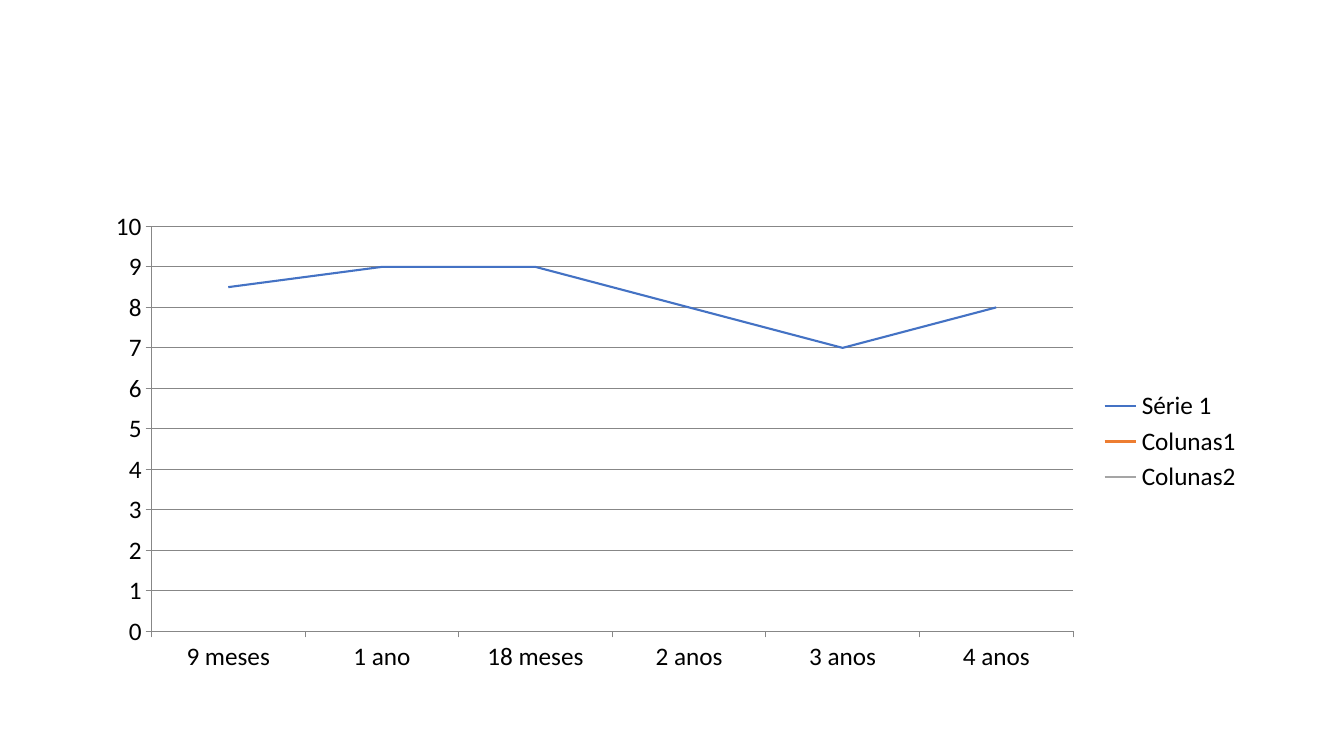
import pptx
import pptx.chart.data
import pptx.dml.color
import pptx.enum.chart
import pptx.util

WIDE, HIGH = 13.33, 7.5
HUES = {"text": "000000", "rule": "878787", "back": "FFFFFF"}
AGES = ["9 meses", "1 ano", "18 meses", "2 anos", "3 anos", "4 anos"]
LINES = [
    ("Série 1", [8.5, 9, 9, 8, 7, 8], "4472C4"),
    ("Colunas1", [None] * len(AGES), "ED7D31"),
    ("Colunas2", [None] * len(AGES), "A5A5A5"),
]


def paint(line, hue, size):
    """Give a line its colour and its width in points."""
    line.color.rgb = pptx.dml.color.RGBColor.from_string(hue)
    line.width = pptx.util.Pt(size)


def style_axes(chart):
    """Set the scale, ticks and rules of both axes."""
    ages, marks = chart.category_axis, chart.value_axis
    for axis in (ages, marks):
        axis.major_tick_mark = pptx.enum.chart.XL_TICK_MARK.OUTSIDE
        axis.minor_tick_mark = pptx.enum.chart.XL_TICK_MARK.NONE
        paint(axis.format.line, HUES["rule"], 0.75)
    ages.has_major_gridlines = False
    marks.has_major_gridlines = True
    paint(marks.major_gridlines.format.line, HUES["rule"], 0.75)
    marks.minimum_scale, marks.maximum_scale, marks.major_unit = 0, 10, 1


def draw_chart(slide, left, top, width, height):
    """Place the line chart in a box given as shares of the slide."""
    data = pptx.chart.data.CategoryChartData()
    data.categories = AGES
    for name, marks, _ in LINES:
        data.add_series(name, marks)
    box = [pptx.util.Inches(share * side) for share, side in
           zip((left, top, width, height), (WIDE, HIGH) * 2)]
    chart = slide.shapes.add_chart(
        pptx.enum.chart.XL_CHART_TYPE.LINE, *box, data).chart
    chart.has_title = False
    chart.font.name = "Calibri"
    chart.font.size = pptx.util.Pt(18)
    chart.font.color.rgb = pptx.dml.color.RGBColor.from_string(HUES["text"])
    chart.has_legend = True
    chart.legend.position = pptx.enum.chart.XL_LEGEND_POSITION.RIGHT
    chart.legend.include_in_layout = False
    plot = chart.plots[0]
    plot.vary_by_categories = False
    for series, (_, _, hue) in zip(plot.series, LINES):
        series.smooth = False
        series.marker.style = pptx.enum.chart.XL_MARKER_STYLE.NONE
        paint(series.format.line, hue, 1.5)
    style_axes(chart)


def main():
    """Build the slide and save it."""
    deck = pptx.Presentation()
    deck.slide_width = pptx.util.Inches(WIDE)
    deck.slide_height = pptx.util.Inches(HIGH)
    slide = deck.slides.add_slide(deck.slide_layouts[6])
    fill = slide.background.fill
    fill.solid()
    fill.fore_color.rgb = pptx.dml.color.RGBColor.from_string(HUES["back"])
    draw_chart(slide, 0.92 / WIDE, 2 / HIGH, 11.5 / WIDE, 4.76 / HIGH)
    deck.save("out.pptx")


if __name__ == "__main__":
    main()
